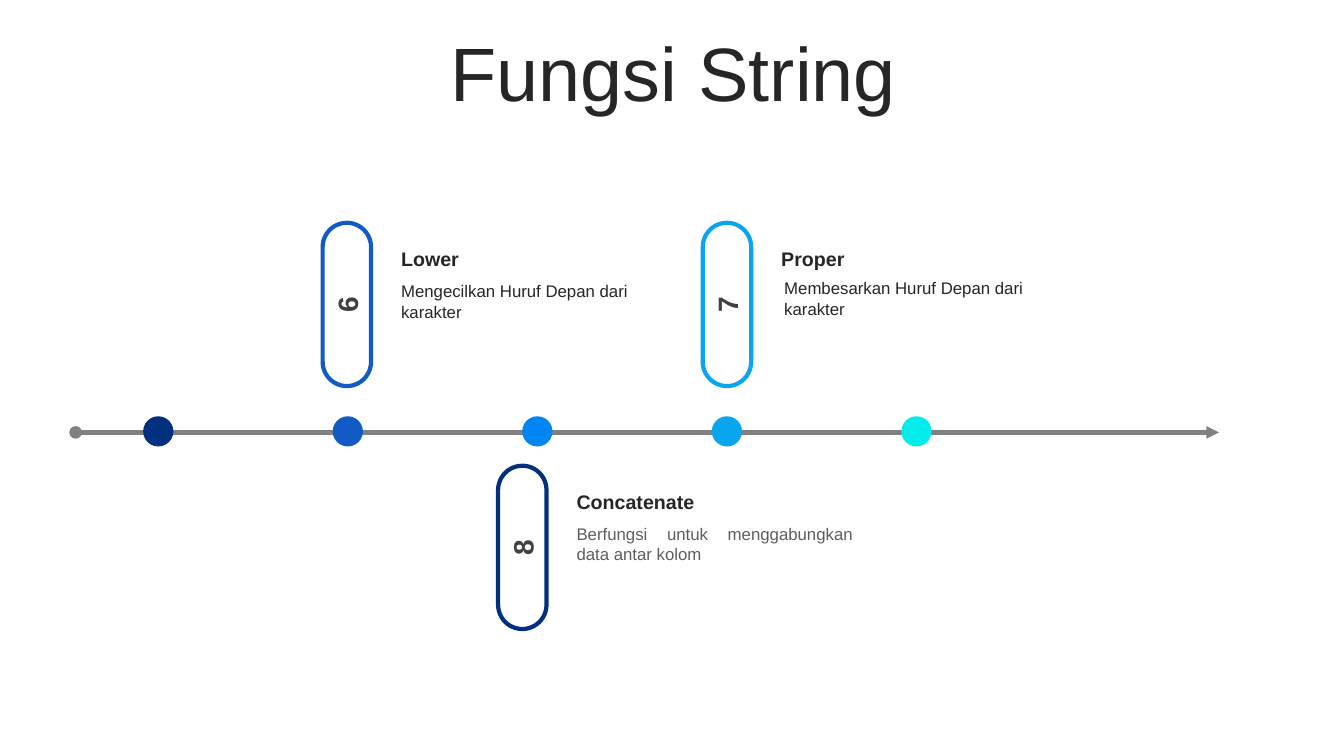
from pptx import Presentation
from pptx.dml.color import RGBColor
from pptx.enum import shapes, text
from pptx.oxml import parse_xml
from pptx.oxml.ns import nsdecls
from pptx.util import Inches, Pt

TITLE = "Fungsi String"
INK, GREY = "262626", "5E5E5E"
LEFT, JUSTIFY = text.PP_ALIGN.LEFT, text.PP_ALIGN.JUSTIFY
DOT_COLORS = ["00307E", "125AC4", "0085F2", "0AA6ED", "02ECEC"]
FUNCTIONS = [
    dict(number="8", name="Concatenate", color="00307E", x=4.37, y=5.19, nudge=0,
         body="Berfungsi untuk menggabungkan data antar kolom", ink=GREY, align=JUSTIFY),
    dict(number="6", name="Lower", color="125AC4", x=2.63, y=2.78, nudge=0,
         body="Mengecilkan Huruf Depan dari karakter", ink=INK, align=LEFT),
    dict(number="7", name="Proper", color="0AA6ED", x=6.4, y=2.78, nudge=0.03,
         body="Membesarkan Huruf Depan dari karakter", ink=INK, align=LEFT),
]
AXIS_Y, AXIS_LEFT, AXIS_RIGHT = 4.29, 0.75, 12.09
DOT, DOT_LEFT, DOT_STEP = 0.3, 1.42, 1.88
CAPSULE_W, CAPSULE_H = 1.62, 0.48
TEXT_DX, TEXT_W = 1.25, 2.94


def rgb(color):
    return RGBColor.from_string(color)


def box(x, y, w, h):
    return [Inches(round(v, 2)) for v in (x, y, w, h)]


def write(sp, content, size, color, bold=False, align=LEFT,
          anchor=text.MSO_ANCHOR.MIDDLE):
    tf = sp.text_frame
    tf.word_wrap = True
    tf.vertical_anchor = anchor
    p = tf.paragraphs[0]
    p.alignment = align
    r = p.add_run()
    r.text = content
    r.font.name = "Arial"
    r.font.size = Pt(size)
    r.font.bold = bold
    r.font.color.rgb = rgb(color)
    return r


def add_shape(s, kind, bounds, fill, line=None):
    sp = s.shapes.add_shape(kind, *bounds)
    sp.shadow.inherit = False
    sp.fill.solid()
    sp.fill.fore_color.rgb = rgb(fill)
    if line:
        sp.line.color.rgb = rgb(line)
        sp.line.width = Pt(3)
    else:
        sp.line.fill.background()
    return sp


def add_axis(s):
    axis = s.shapes.add_connector(shapes.MSO_CONNECTOR.STRAIGHT, Inches(AXIS_LEFT),
                                  Inches(AXIS_Y), Inches(AXIS_RIGHT), Inches(AXIS_Y))
    axis.line.color.rgb = rgb("808080")
    axis.line.width = Pt(3)
    ln = axis.line._get_or_add_ln()
    for end, kind in (("headEnd", "oval"), ("tailEnd", "triangle")):
        ln.append(parse_xml(f'<a:{end} {nsdecls("a")} type="{kind}"/>'))
    axis._element.spPr.append(parse_xml(f'<a:effectLst {nsdecls("a")}/>'))


def add_function(s, f):
    x, y = f["x"], f["y"]
    capsule = add_shape(s, shapes.MSO_SHAPE.ROUNDED_RECTANGLE,
                        box(x, y, CAPSULE_W, CAPSULE_H), "FFFFFF", f["color"])
    capsule.adjustments[0] = 0.5
    capsule.rotation = 270
    r = write(capsule, f["number"], 20, "404040", bold=True, align=text.PP_ALIGN.CENTER)
    r.font._element.set("spc", "600")

    left = x + TEXT_DX
    body = s.shapes.add_textbox(
        *box(left + f["nudge"], y - 0.04 - f["nudge"], TEXT_W, 0.5))
    write(body, f["body"], 12, f["ink"], align=f["align"], anchor=text.MSO_ANCHOR.TOP)
    name = s.shapes.add_textbox(*box(left, y - 0.38, TEXT_W, 0.34))
    write(name, f["name"], 14, INK, bold=True)


def main():
    prs = Presentation()
    prs.slide_width, prs.slide_height = Inches(13.33), Inches(7.5)
    s = prs.slides.add_slide(prs.slide_layouts[5])

    title = s.shapes.title
    title.left, title.top, title.width, title.height = box(0.35, 0.37, 12.66, 0.79)
    write(title, TITLE, 54, INK, align=text.PP_ALIGN.CENTER)
    title.text_frame.auto_size = text.MSO_AUTO_SIZE.NONE
    title.text_frame.paragraphs[0].line_spacing = 0.9

    add_axis(s)
    for i, color in enumerate(DOT_COLORS):
        add_shape(s, shapes.MSO_SHAPE.OVAL,
                  box(DOT_LEFT + i * DOT_STEP, AXIS_Y - DOT / 2 - 0.01, DOT, DOT), color)
    for f in FUNCTIONS:
        add_function(s, f)

    prs.save("out.pptx")


if __name__ == "__main__":
    main()
